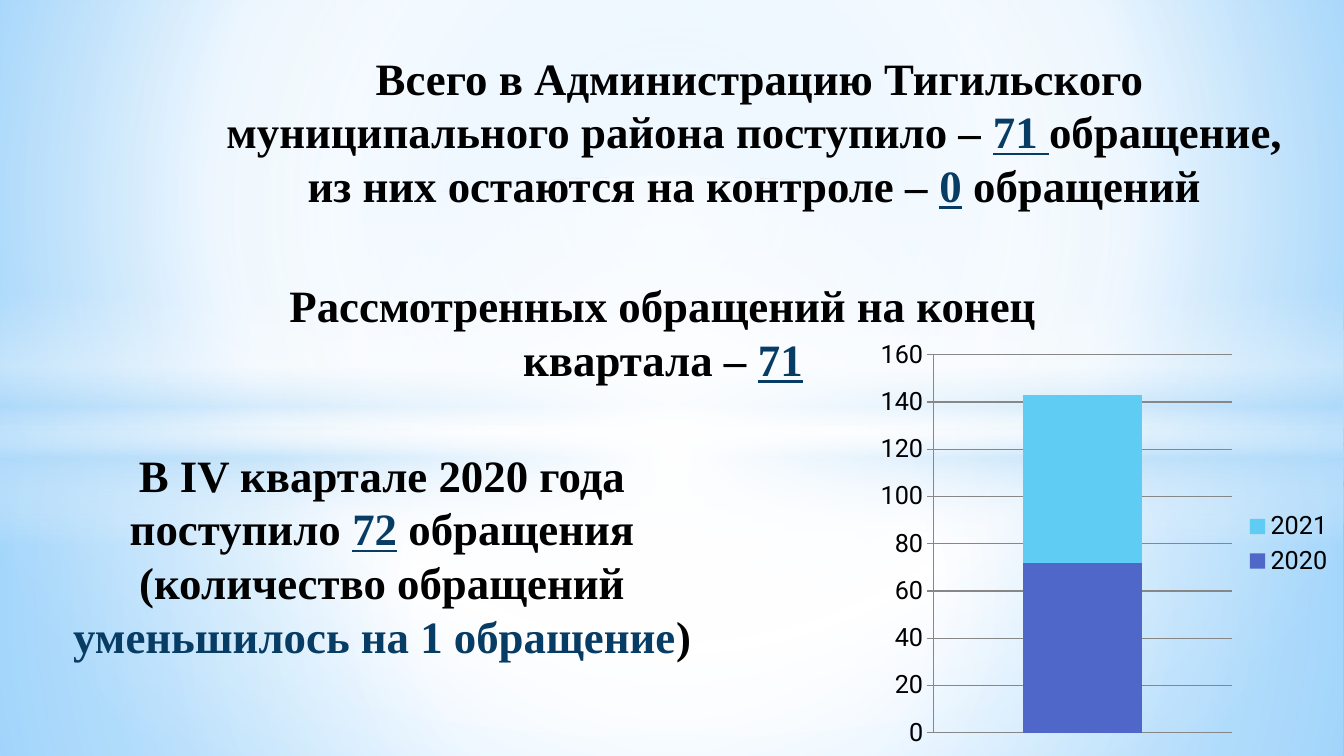
"""Build a slide on citizens' appeals with a stacked column for two years."""
from dataclasses import dataclass

from lxml import etree
from pptx import Presentation
from pptx.chart.data import CategoryChartData
from pptx.dml.color import RGBColor
from pptx.enum.chart import XL_CHART_TYPE, XL_LEGEND_POSITION, XL_TICK_MARK
from pptx.enum.shapes import MSO_SHAPE
from pptx.enum.text import MSO_AUTO_SIZE, PP_ALIGN
from pptx.oxml.ns import qn
from pptx.util import Inches, Pt

RECTANGLE, OVAL = MSO_SHAPE.RECTANGLE, MSO_SHAPE.OVAL
CENTER = PP_ALIGN.CENTER
GROW = MSO_AUTO_SIZE.SHAPE_TO_FIT_TEXT
STACKED = XL_CHART_TYPE.COLUMN_STACKED
LEGEND_RIGHT = XL_LEGEND_POSITION.RIGHT
TICK_OUT, TICK_NONE = XL_TICK_MARK.OUTSIDE, XL_TICK_MARK.NONE

WHITE = RGBColor(0xFF, 0xFF, 0xFF)
BLACK = RGBColor(0x00, 0x00, 0x00)
NAVY = RGBColor(0x07, 0x3C, 0x65)
SKY = RGBColor(0x9E, 0xD5, 0xFF)
AZURE = RGBColor(0x5B, 0xB9, 0xFF)
MIST = RGBColor(0xB4, 0xDC, 0xFA)
GRID_GRAY = RGBColor(0x87, 0x87, 0x87)
INDIGO = RGBColor(0x4E, 0x67, 0xC8)
CYAN = RGBColor(0x5E, 0xCC, 0xF3)

SLIDE_W, SLIDE_H = Inches(13.33), Inches(7.5)
HEADING_FONT, CHART_FONT = "Times New Roman", "Roboto"


@dataclass(frozen=True)
class Area:
    """Place and size in percent of the slide."""
    x: float
    y: float
    w: float
    h: float

    def emu(self) -> tuple[int, ...]:
        return tuple(round(share * side / 100) for share, side in
                     zip((self.x, self.y, self.w, self.h), (SLIDE_W, SLIDE_H) * 2))


@dataclass(frozen=True)
class Stop:
    """Gradient stop: position and opacity in percent."""
    position: int
    color: RGBColor
    opacity: int = 100


@dataclass(frozen=True)
class Glow:
    """Gradient shape; a missing focus makes it run downwards."""
    outline: int
    area: Area
    stops: tuple[Stop, ...]
    focus: tuple[int, ...] | None = (50, 50, 50, 50)


@dataclass(frozen=True)
class Phrase:
    """Piece of a statement with its format."""
    text: str
    color: RGBColor = BLACK
    underline: bool = False


@dataclass(frozen=True)
class Statement:
    """Centred text made of paragraphs of phrases."""
    area: Area
    paragraphs: tuple[tuple[Phrase, ...], ...]


@dataclass(frozen=True)
class Year:
    """Appeals received in one year."""
    name: str
    appeals: int
    color: RGBColor


BACKGROUND_STOPS = (Stop(0, SKY), Stop(60, WHITE), Stop(100, AZURE))
BACKGROUND_FOCUS = (20, 10, 20, 60)
HORIZON = 56.4

GLOWS = (
    Glow(RECTANGLE, Area(0, HORIZON, 100, 100 - HORIZON),
         (Stop(0, WHITE, 91), Stop(37, WHITE, 76), Stop(100, MIST, 79))),
    Glow(RECTANGLE, Area(0, 0, 100, HORIZON),
         (Stop(0, WHITE, 89), Stop(48, WHITE, 62), Stop(100, MIST, 79))),
    Glow(RECTANGLE, Area(0, 38.67, 100, 33.33),
         (Stop(0, WHITE, 0), Stop(29, WHITE, 30), Stop(45, MIST, 40),
          Stop(55, WHITE, 26), Stop(65, MIST, 60), Stop(100, WHITE, 0)), None),
    Glow(OVAL, Area(0, 23.33, 100, 74.4), (Stop(0, WHITE), Stop(54, WHITE, 0))),
)

STATEMENTS = (
    Statement(Area(14.78, 6, 83.5, 22.93), (
        (Phrase("Всего в Администрацию Тигильского муниципального района поступило – "),
         Phrase("71 ", NAVY, True), Phrase("обращение, ")),
        (Phrase("из них остаются на контроле – "), Phrase("0", NAVY, True),
         Phrase(" обращений ")))),
    Statement(Area(16.58, 36.13, 65.49, 15.73), (
        (Phrase("Рассмотренных обращений на конец квартала – "),
         Phrase("71", NAVY, True)),)),
    Statement(Area(3.45, 58.53, 49.96, 30.13), (
        (Phrase("В IV квартале 2020 года поступило "), Phrase("72", NAVY, True),
         Phrase(" обращения (количество обращений "),
         Phrase("уменьшилось на 1 обращение", NAVY), Phrase(")")),)),
)

YEARS = (Year("2020", 72, INDIGO), Year("2021", 71, CYAN))
CHART_AREA = Area(64.82, 43.87, 35.18, 56.13)


def apply_gradient(owner, stops: tuple[Stop, ...], focus: tuple[int, ...] | None) -> None:
    """Put a gradient in place of the owner's first solid fill."""
    solid = owner.find(f".//{qn('a:solidFill')}")
    gradient = etree.Element(qn("a:gradFill"), rotWithShape="1")
    stop_list = etree.SubElement(gradient, qn("a:gsLst"))
    for stop in stops:
        mark = etree.SubElement(stop_list, qn("a:gs"), pos=str(stop.position * 1000))
        color = etree.SubElement(mark, qn("a:srgbClr"), val=str(stop.color))
        if stop.opacity < 100:
            etree.SubElement(color, qn("a:alpha"), val=str(stop.opacity * 1000))
    if focus is None:
        etree.SubElement(gradient, qn("a:lin"), ang="5400000", scaled="0")
    else:
        circle = etree.SubElement(gradient, qn("a:path"), path="circle")
        edges = {edge: str(share * 1000) for edge, share in zip("ltrb", focus)}
        etree.SubElement(circle, qn("a:fillToRect"), **edges)
    solid.getparent().replace(solid, gradient)


def add_glow(slide, glow: Glow) -> None:
    """Draw one soft light of the backdrop."""
    light = slide.shapes.add_shape(glow.outline, *glow.area.emu())
    light.shadow.inherit = False
    light.line.fill.background()
    light.fill.solid()
    light.fill.fore_color.rgb = WHITE
    apply_gradient(light.element, glow.stops, glow.focus)


def add_text(paragraph, text: str, *, color: RGBColor, underline: bool = False,
             size: int = 32, bold: bool = True, font: str = HEADING_FONT) -> None:
    """Append a formatted run."""
    run = paragraph.add_run()
    run.text = text
    run.font.name, run.font.size, run.font.bold = font, Pt(size), bold
    run.font.underline = underline
    run.font.color.rgb = color


def add_statement(slide, statement: Statement) -> None:
    """Write one statement."""
    frame = slide.shapes.add_textbox(*statement.area.emu()).text_frame
    frame.word_wrap = True
    frame.auto_size = GROW
    for index, phrases in enumerate(statement.paragraphs):
        paragraph = frame.add_paragraph() if index else frame.paragraphs[0]
        paragraph.alignment = CENTER
        for phrase in phrases:
            add_text(paragraph, phrase.text, color=phrase.color,
                     underline=phrase.underline)


def add_appeals_chart(slide) -> None:
    """Stack the appeals of the years in one column."""
    appeals = CategoryChartData()
    appeals.categories = ["1"]
    for year in YEARS:
        appeals.add_series(year.name, [year.appeals])
    chart = slide.shapes.add_chart(STACKED, *CHART_AREA.emu(), appeals).chart
    chart.has_title = False
    chart.font.name, chart.font.size = CHART_FONT, Pt(18)
    chart.font.color.rgb = BLACK
    chart.has_legend = True
    chart.legend.position = LEGEND_RIGHT
    chart.legend.include_in_layout = False
    chart.category_axis.visible = False
    scale = chart.value_axis
    scale.major_tick_mark, scale.minor_tick_mark = TICK_OUT, TICK_NONE
    scale.has_major_gridlines = True
    for line in (scale.format.line, scale.major_gridlines.format.line):
        line.color.rgb = GRID_GRAY
        line.width = Pt(0.75)
    columns = chart.plots[0]
    columns.gap_width, columns.overlap, columns.vary_by_categories = 150, 100, False
    for series, year in zip(columns.series, YEARS):
        series.format.fill.solid()
        series.format.fill.fore_color.rgb = year.color


def main() -> None:
    """Assemble and save the slide."""
    deck = Presentation()
    deck.slide_width, deck.slide_height = SLIDE_W, SLIDE_H
    slide = deck.slides.add_slide(deck.slide_layouts[6])
    slide.background.fill.solid()
    slide.background.fill.fore_color.rgb = WHITE
    apply_gradient(slide.element, BACKGROUND_STOPS, BACKGROUND_FOCUS)
    for glow in GLOWS:
        add_glow(slide, glow)
    for statement in STATEMENTS:
        add_statement(slide, statement)
    add_appeals_chart(slide)
    deck.save("out.pptx")


if __name__ == "__main__":
    main()
